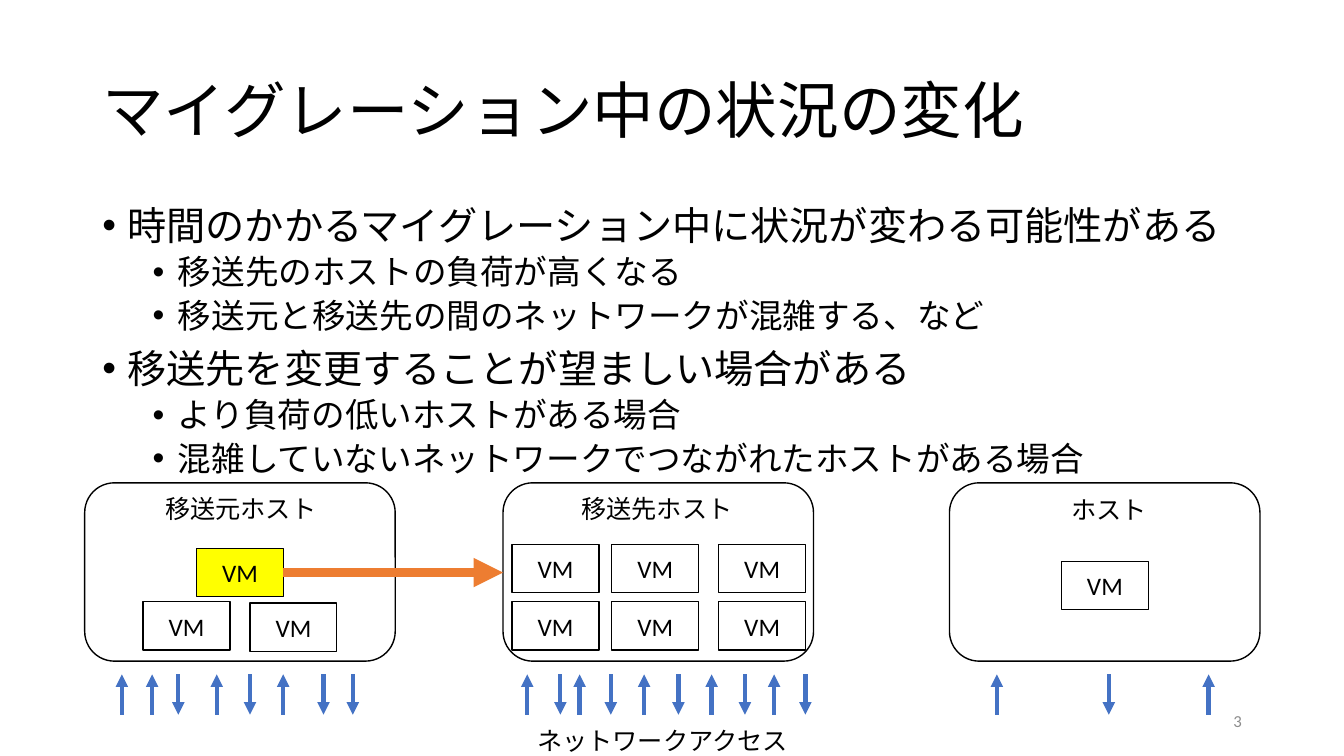
from lxml import etree
from pptx import Presentation
from pptx import util as u
from pptx.dml import color
from pptx.enum import shapes, text
from pptx.oxml import ns

COLORS = {
    "black": "000000",
    "white": "FFFFFF",
    "moving": "FFFF00",
    "page": "8C8C8C",
    "migration": "ED7D31",
    "access": "4472C4",
}
FONT = "Calibri"

BULLETS = [
    (0, "時間のかかるマイグレーション中に状況が変わる可能性がある"),
    (1, "移送先のホストの負荷が高くなる"),
    (1, "移送元と移送先の間のネットワークが混雑する、など"),
    (0, "移送先を変更することが望ましい場合がある"),
    (1, "より負荷の低いホストがある場合"),
    (1, "混雑していないネットワークでつながれたホストがある場合"),
]
LEVELS = [
    {"size": 28, "before": 10, "margin": 18},
    {"size": 24, "before": 5, "margin": 54},
]
HOST_LEFTS = [60.5, 359.3, 678.2]
SOURCE_VMS = [(178.6, 430.6), (102.2, 429.8)]
TARGET_VMS = [(left, top) for top in (388.8, 429.8) for left in (365.8, 437, 513.4)]
OTHER_VMS = [(758.2, 401)]
LABELS = [
    ("移送元ホスト", 110.9, 348.5, 123.8),
    ("移送先ホスト", 408.2, 348.5, 123.8),
    ("ホスト", 758.2, 349.9, 77),
    ("ネットワークアクセス", 376.6, 514.8, 198.7),
]
UP_ARROWS = [87.1, 108.7, 154.8, 202.3, 376.6, 414, 460.1, 508.3, 553, 712.1, 863.3]
DOWN_ARROWS = [127.4, 178.6, 231.1, 252, 400.3, 436.3, 484.6, 532.1, 575.3, 792]
ARROW_TOP, ARROW_BOTTOM = 481.7, 510.5


def rgb(name):
    return color.RGBColor.from_string(COLORS[name])


class SlideBuilder:
    def __init__(self, slide):
        self.slide = slide

    def style(self, paragraph, size, ink="black"):
        for run in paragraph.runs:
            run.font.name = FONT
            run.font.size = u.Pt(size)
            run.font.color.rgb = rgb(ink)

    def textbox(self, content, left, top, width, height, size,
                ink="black", anchor=text.MSO_ANCHOR.TOP, align=text.PP_ALIGN.LEFT):
        shape = self.slide.shapes.add_textbox(*map(u.Pt, (left, top, width, height)))
        frame = shape.text_frame
        frame.word_wrap = True
        frame.vertical_anchor = anchor
        frame.text = content
        paragraph = frame.paragraphs[0]
        paragraph.alignment = align
        self.style(paragraph, size, ink)
        return frame

    def bullets(self, items, left, top, width, height):
        content = "\n".join(line for _, line in items)
        frame = self.textbox(content, left, top, width, height, 28)
        for paragraph, (level, _) in zip(frame.paragraphs, items):
            look = LEVELS[level]
            paragraph.level = level
            paragraph.line_spacing = 0.9
            paragraph.space_before = u.Pt(look["before"])
            self.style(paragraph, look["size"])
            properties = paragraph._p.get_or_add_pPr()
            properties.set("marL", str(u.Pt(look["margin"])))
            properties.set("indent", str(u.Pt(-18)))
            etree.SubElement(properties, ns.qn("a:buFont"), typeface="Arial")
            etree.SubElement(properties, ns.qn("a:buChar"), char="•")

    def box(self, kind, left, top, width, height, fill="white"):
        shape = self.slide.shapes.add_shape(kind, *map(u.Pt, (left, top, width, height)))
        shape.shadow.inherit = False
        shape.fill.solid()
        shape.fill.fore_color.rgb = rgb(fill)
        shape.line.color.rgb = rgb("black")
        shape.line.width = u.Pt(1)
        return shape

    def host(self, left):
        self.box(shapes.MSO_SHAPE.ROUNDED_RECTANGLE, left, 344.9, 221.8, 127.4)

    def vm(self, left, top, fill="white"):
        shape = self.box(shapes.MSO_SHAPE.RECTANGLE, left, top, 62, 34.6, fill)
        frame = shape.text_frame
        frame.vertical_anchor = text.MSO_ANCHOR.MIDDLE
        frame.text = "VM"
        frame.paragraphs[0].alignment = text.PP_ALIGN.CENTER
        self.style(frame.paragraphs[0], 18)

    def arrow(self, start, end, ink, width):
        connector = self.slide.shapes.add_connector(
            shapes.MSO_CONNECTOR.STRAIGHT, *map(u.Pt, (*start, *end)))
        connector.line.color.rgb = rgb(ink)
        connector.line.width = u.Pt(width)
        etree.SubElement(connector.line._get_or_add_ln(), ns.qn("a:tailEnd"), type="triangle")
        etree.SubElement(connector._element.spPr, ns.qn("a:effectLst"))


def main():
    presentation = Presentation()
    presentation.slide_width = u.Pt(960)
    presentation.slide_height = u.Pt(540)
    builder = SlideBuilder(presentation.slides.add_slide(presentation.slide_layouts[6]))

    builder.textbox("マイグレーション中の状況の変化", 66, 28.8, 828, 104.4, 44,
                    anchor=text.MSO_ANCHOR.MIDDLE).paragraphs[0].line_spacing = 0.9
    builder.bullets(BULLETS, 66, 144, 828, 342.7)
    builder.textbox("3", 678.2, 500.4, 216, 28.8, 12, "page",
                    text.MSO_ANCHOR.MIDDLE, text.PP_ALIGN.RIGHT)

    for left in HOST_LEFTS:
        builder.host(left)
    builder.vm(140.4, 391.7, "moving")
    for left, top in SOURCE_VMS + TARGET_VMS + OTHER_VMS:
        builder.vm(left, top)
    for label, left, top, width in LABELS:
        builder.textbox(label, left, top, width, 28.8, 18)

    builder.arrow((202.4, 409), (359.3, 409), "migration", 7)
    for x in UP_ARROWS:
        builder.arrow((x, ARROW_BOTTOM), (x, ARROW_TOP), "access", 3)
    for x in DOWN_ARROWS:
        builder.arrow((x, ARROW_TOP), (x, ARROW_BOTTOM), "access", 3)

    presentation.save("out.pptx")


if __name__ == "__main__":
    main()
